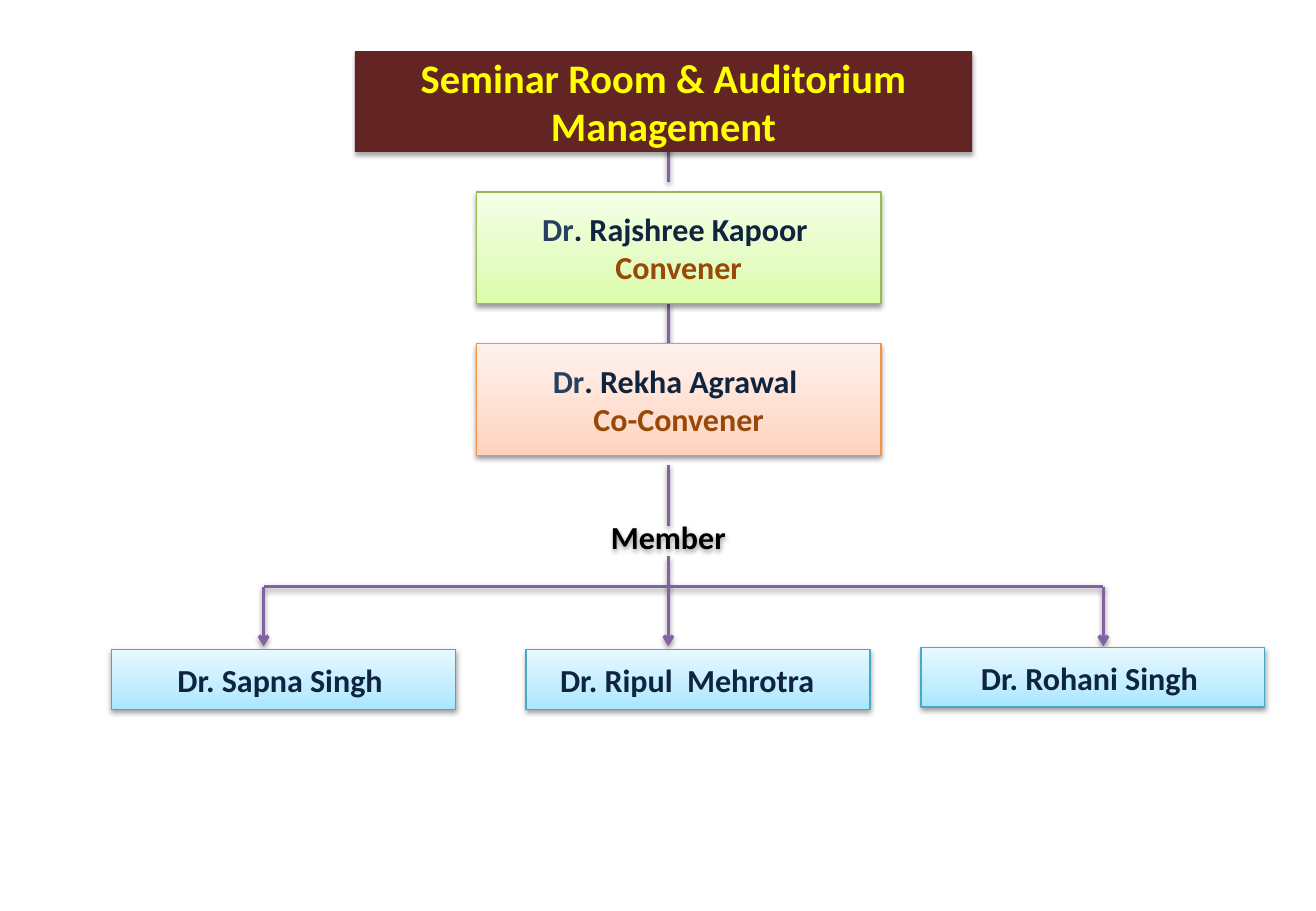
import pptx
import pptx.util
import pptx.oxml
import pptx.oxml.ns
import pptx.dml.color
import pptx.enum.shapes
import pptx.enum.text

Inches = pptx.util.Inches
Pt = pptx.util.Pt
RGBColor = pptx.dml.color.RGBColor

MAROON = RGBColor(0x63, 0x25, 0x23)
YELLOW = RGBColor(0xFF, 0xFF, 0x00)
PURPLE = RGBColor(0x80, 0x64, 0xA2)
NAVY = RGBColor(0x0F, 0x24, 0x3E)
BLUE = RGBColor(0x25, 0x40, 0x61)
BROWN = RGBColor(0x98, 0x48, 0x07)
BLACK = RGBColor(0x00, 0x00, 0x00)
GREEN_LINE = RGBColor(0x98, 0xB9, 0x55)
ORANGE_LINE = RGBColor(0xF6, 0x92, 0x40)
AQUA_LINE = RGBColor(0x46, 0xAA, 0xC5)
GREENS = (RGBColor(0xDA, 0xFD, 0xA7), RGBColor(0xE4, 0xFC, 0xC2), RGBColor(0xF5, 0xFF, 0xE7))
ORANGES = (RGBColor(0xFF, 0xD2, 0xBD), RGBColor(0xFF, 0xDE, 0xD0), RGBColor(0xFF, 0xF2, 0xED))
AQUAS = (RGBColor(0xA7, 0xE6, 0xFF), RGBColor(0xC1, 0xED, 0xFF), RGBColor(0xE7, 0xF8, 0xFF))

TITLE = "Seminar Room & Auditorium Management"
GROUP_LABEL = "Member"
LEADERS = [
    (". Rajshree Kapoor ", "Convener", 1.58, GREENS, GREEN_LINE),
    (". Rekha Agrawal ", "Co-Convener", 2.83, ORANGES, ORANGE_LINE),
]
MEMBERS = [
    ("Dr. Sapna Singh ", 0.92, 5.35, 0.07),
    ("Dr. Ripul  Mehrotra", 4.33, 5.35, 0.25),
    ("Dr. Rohani Singh ", 7.58, 5.33, 0.07),
]
TRUNK_X = 5.5
TRUNK_SPANS = [(1.17, 1.5), (2.5, 2.83), (3.83, 4.33), (4.58, 4.83)]
BRANCH_XS = (2.17, TRUNK_X, 9.08)
BRANCH_TOP, BRANCH_BOTTOM = 4.83, 5.32
LEADER_LEFT, LEADER_WIDTH, LEADER_HEIGHT = 3.92, 3.33, 0.92
MEMBER_WIDTH, MEMBER_HEIGHT = 2.83, 0.49

NAMESPACE = pptx.oxml.ns.nsdecls("a")


def add_shadow(shape, distance=1.6, opacity=38):
    shape._element.spPr.append(pptx.oxml.parse_xml(
        f'<a:effectLst {NAMESPACE}><a:outerShdw blurRad="{Pt(3.1)}" dist="{Pt(distance)}" '
        f'dir="5400000" rotWithShape="0"><a:srgbClr val="000000">'
        f'<a:alpha val="{opacity * 1000}"/></a:srgbClr></a:outerShdw></a:effectLst>'))


def write_text(shape, lines, size=19, right_inset=0.07):
    frame = shape.text_frame
    frame.word_wrap = True
    frame.auto_size = pptx.enum.text.MSO_AUTO_SIZE.NONE
    frame.vertical_anchor = pptx.enum.text.MSO_ANCHOR.MIDDLE
    frame.margin_left, frame.margin_right = Inches(0.07), Inches(right_inset)
    frame.margin_top = frame.margin_bottom = Inches(0.04)
    for index, runs in enumerate(lines):
        paragraph = frame.add_paragraph() if index else frame.paragraphs[0]
        paragraph.alignment = pptx.enum.text.PP_ALIGN.CENTER
        for text, color in runs:
            run = paragraph.add_run()
            run.text = text
            run.font.name = "Calibri"
            run.font.size = Pt(size)
            run.font.bold = True
            run.font.color.rgb = color


def add_box(slide, left, top, width, height, lines, colors, line_color, **text_format):
    box = slide.shapes.add_shape(
        pptx.enum.shapes.MSO_SHAPE.RECTANGLE,
        Inches(left), Inches(top), Inches(width), Inches(height))
    box.fill.background()
    stops = "".join(
        f'<a:gs pos="{position * 1000}"><a:srgbClr val="{color}"/></a:gs>'
        for position, color in zip((0, 35, 100), colors))
    properties = box._element.spPr
    properties.replace(properties.find(pptx.oxml.ns.qn("a:noFill")), pptx.oxml.parse_xml(
        f'<a:gradFill {NAMESPACE} rotWithShape="1"><a:gsLst>{stops}</a:gsLst>'
        '<a:lin ang="16200000" scaled="0"/></a:gradFill>'))
    box.line.color.rgb = line_color
    box.line.width = Pt(0.75)
    add_shadow(box)
    write_text(box, lines, **text_format)


def add_line(slide, x1, y1, x2, y2, arrow=False):
    connector = slide.shapes.add_connector(
        pptx.enum.shapes.MSO_CONNECTOR.STRAIGHT,
        Inches(x1), Inches(y1), Inches(x2), Inches(y2))
    connector.line.color.rgb = PURPLE
    connector.line.width = Pt(2)
    if arrow:
        connector.line._get_or_add_ln().append(
            pptx.oxml.parse_xml(f'<a:tailEnd {NAMESPACE} type="arrow"/>'))
    add_shadow(connector)


def format_title(slide):
    title = slide.shapes.title
    title.left, title.top = Inches(2.92), Inches(0.42)
    title.width, title.height = Inches(5.08), Inches(0.83)
    title._element.spPr.append(pptx.oxml.parse_xml(
        f'<a:prstGeom {NAMESPACE} prst="roundRect"><a:avLst/></a:prstGeom>'))
    title.fill.solid()
    title.fill.fore_color.rgb = MAROON
    add_shadow(title, distance=1.8, opacity=35)
    write_text(title, [[(TITLE, YELLOW)]], size=24)
    slide.shapes._spTree.append(title._element)


def main():
    presentation = pptx.Presentation()
    presentation.slide_width, presentation.slide_height = Inches(10.83), Inches(7.5)
    slide = presentation.slides.add_slide(presentation.slide_layouts[5])

    for top, bottom in TRUNK_SPANS:
        add_line(slide, TRUNK_X, top, TRUNK_X, bottom)
    add_line(slide, BRANCH_XS[0], BRANCH_TOP, BRANCH_XS[-1], BRANCH_TOP)
    for x in BRANCH_XS:
        add_line(slide, x, BRANCH_TOP, x, BRANCH_BOTTOM, arrow=True)

    format_title(slide)
    for name, role, top, colors, line_color in LEADERS:
        lines = [[("Dr", BLUE), (name, NAVY)], [(role, BROWN)]]
        add_box(slide, LEADER_LEFT, top, LEADER_WIDTH, LEADER_HEIGHT, lines, colors, line_color)

    label = slide.shapes.add_textbox(Inches(4.25), Inches(4.17), Inches(2.5), Inches(0.49))
    add_shadow(label)
    write_text(label, [[(GROUP_LABEL, BLACK)]])

    for name, left, top, right_inset in MEMBERS:
        add_box(slide, left, top, MEMBER_WIDTH, MEMBER_HEIGHT, [[(name, NAVY)]],
                AQUAS, AQUA_LINE, right_inset=right_inset)

    presentation.save("out.pptx")


if __name__ == "__main__":
    main()
